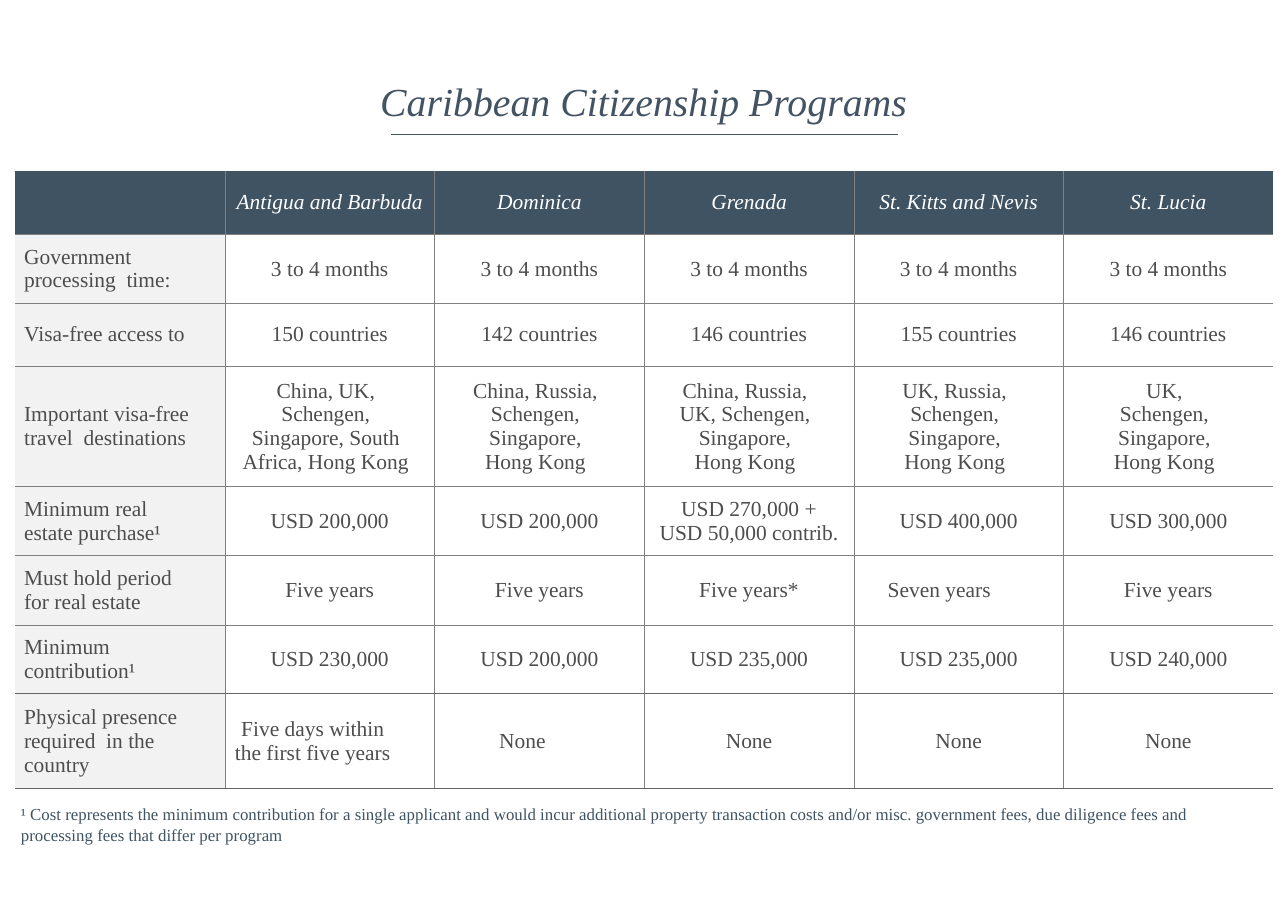
from lxml import etree
from pptx import Presentation
from pptx.dml.color import RGBColor
from pptx.enum import shapes, text
from pptx.oxml import ns
from pptx.util import Pt

COLOURS = {"title": "435363", "rule": "445567", "header": "3F5363", "label": "F2F2F2",
           "body": "4D4D4D", "white": "FFFFFF", "grid": "808080", "heavy": "646367"}
CENTRE, LEFT, RIGHT = text.PP_ALIGN.CENTER, text.PP_ALIGN.LEFT, text.PP_ALIGN.RIGHT
COLUMN_WIDTH = 137
ROW_HEIGHTS = [41.5, 45, 41, 78.5, 45, 45, 45, 61.5]
INSET = 5.76

PROGRAMS = [
    ["", "Antigua and Barbuda", "Dominica", "Grenada", "St. Kitts and Nevis", "St. Lucia"],
    ["Government processing  time:"] + ["3 to 4 months"] * 5,
    ["Visa-free access to"] + [f"{count} countries" for count in (150, 142, 146, 155, 146)],
    ["Important visa-free travel  destinations",
     "China, UK, Schengen,\nSingapore, South Africa, Hong Kong",
     "China, Russia, Schengen,\nSingapore,\nHong Kong",
     "China, Russia,\nUK, Schengen, Singapore,\nHong Kong",
     "UK, Russia,\nSchengen,\nSingapore,\nHong Kong",
     "UK,\nSchengen,\nSingapore,\nHong Kong"],
    ["Minimum real estate purchase¹", "USD 200,000", "USD 200,000",
     "USD 270,000 +\vUSD 50,000 contrib.", "USD 400,000", "USD 300,000"],
    ["Must hold period for real estate", "Five years", "Five years", "Five years*",
     "Seven years", "Five years"],
    ["Minimum contribution¹"] + [f"USD {amount},000" for amount in (230, 200, 235, 235, 240)],
    ["Physical presence required  in the country",
     "Five days within the first five years"] + ["None"] * 4,
]
DESTINATIONS, HOLD_PERIOD, PRESENCE = 3, 5, 7
RIGHT_INSETS = {(HOLD_PERIOD, 4): 47.5, (PRESENCE, 1): 28, (PRESENCE, 2): 28}
FOOTNOTE = ("¹ Cost represents the minimum contribution for a single applicant and would incur "
            "additional property transaction costs and/or misc. government fees, due diligence "
            "fees and processing fees that differ per program")


def rgb(colour):
    return RGBColor.from_string(COLOURS[colour])


class SlideBuilder:
    font = "Times New Roman"

    def __init__(self, slide):
        self.slide = slide

    def fill_text(self, frame, content, size, colour, align=LEFT, italic=False):
        """Fill a text frame, one paragraph for each line of the content."""
        frame.text = content
        for paragraph in frame.paragraphs:
            paragraph.alignment = align
            paragraph.font.name = self.font
            paragraph.font.size = Pt(size)
            paragraph.font.italic = italic
            paragraph.font.color.rgb = rgb(colour)

    def text_box(self, box, content, size, colour, anchor=text.MSO_ANCHOR.TOP, **style):
        frame = self.slide.shapes.add_textbox(*map(Pt, box)).text_frame
        frame.word_wrap = True
        frame.vertical_anchor = anchor
        frame.margin_left = frame.margin_right = frame.margin_top = frame.margin_bottom = 0
        self.fill_text(frame, content, size, colour, **style)
        return frame

    def rule(self, x1, x2, y, colour, width):
        line = self.slide.shapes.add_connector(
            shapes.MSO_CONNECTOR.STRAIGHT, Pt(x1), Pt(y), Pt(x2), Pt(y))
        line.line.color.rgb = rgb(colour)
        line.line.width = Pt(width)
        etree.SubElement(line._element.spPr, ns.qn("a:effectLst"))

    def border(self, cell, side, colour=None, width=0.25):
        """Draw one side of a cell, or clear it when there is no colour."""
        edge = etree.SubElement(cell._tc.get_or_add_tcPr(), ns.qn(f"a:ln{side}"),
                                w=str(Pt(width)))
        if colour:
            fill = etree.SubElement(edge, ns.qn("a:solidFill"))
            etree.SubElement(fill, ns.qn("a:srgbClr"), val=COLOURS[colour])
        else:
            etree.SubElement(edge, ns.qn("a:noFill"))

    def row_edge(self, cell, side, row):
        """Draw the horizontal edge above the given row; the last two are heavy."""
        if row == 0:
            self.border(cell, side)
        elif row >= PRESENCE:
            self.border(cell, side, "heavy", 1)
        else:
            self.border(cell, side, "grid")

    def cell(self, cell, row, column, content, last_column):
        self.border(cell, "L", "grid" if column else None)
        self.border(cell, "R", "grid" if column < last_column else None)
        self.row_edge(cell, "T", row)
        self.row_edge(cell, "B", row + 1)
        if row == 0 or column == 0:
            cell.fill.solid()
            cell.fill.fore_color.rgb = rgb("label" if row else "header")
        else:
            cell.fill.background()
        cell.vertical_anchor = text.MSO_ANCHOR.MIDDLE
        cell.margin_left = cell.margin_top = cell.margin_bottom = Pt(INSET)
        usual_right = 18 if column == 0 else 11 if row == DESTINATIONS else INSET
        cell.margin_right = Pt(RIGHT_INSETS.get((row, column), usual_right))
        align = LEFT if column == 0 else RIGHT if (row, column) == (HOLD_PERIOD, 4) else CENTRE
        self.fill_text(cell.text_frame, content, 14, "body" if row else "white", align,
                       italic=row == 0)

    def table(self, left, top, rows):
        columns = len(rows[0])
        table = self.slide.shapes.add_table(
            len(rows), columns, Pt(left), Pt(top),
            Pt(columns * COLUMN_WIDTH), Pt(sum(ROW_HEIGHTS))).table
        table.first_row = table.horz_banding = False
        for column in table.columns:
            column.width = Pt(COLUMN_WIDTH)
        for r, (height, contents) in enumerate(zip(ROW_HEIGHTS, rows)):
            table.rows[r].height = Pt(height)
            for c, content in enumerate(contents):
                self.cell(table.cell(r, c), r, c, content, columns - 1)


def main():
    deck = Presentation()
    deck.slide_width, deck.slide_height = Pt(841.68), Pt(595.44)
    builder = SlideBuilder(deck.slides.add_slide(deck.slide_layouts[6]))
    builder.rule(255.6, 586.8, 87.84, "rule", 0.5)
    builder.text_box((13.7, 525.6, 775.5, 26.6), FOOTNOTE, 11, "header")
    builder.table(10, 111.6, PROGRAMS)
    title = builder.text_box((57.6, 51.1, 726.5, 33.1), "Caribbean Citizenship Programs", 26,
                             "title", text.MSO_ANCHOR.MIDDLE, align=CENTRE, italic=True)
    title.paragraphs[0].line_spacing = 0.9
    deck.save("out.pptx")


if __name__ == "__main__":
    main()
